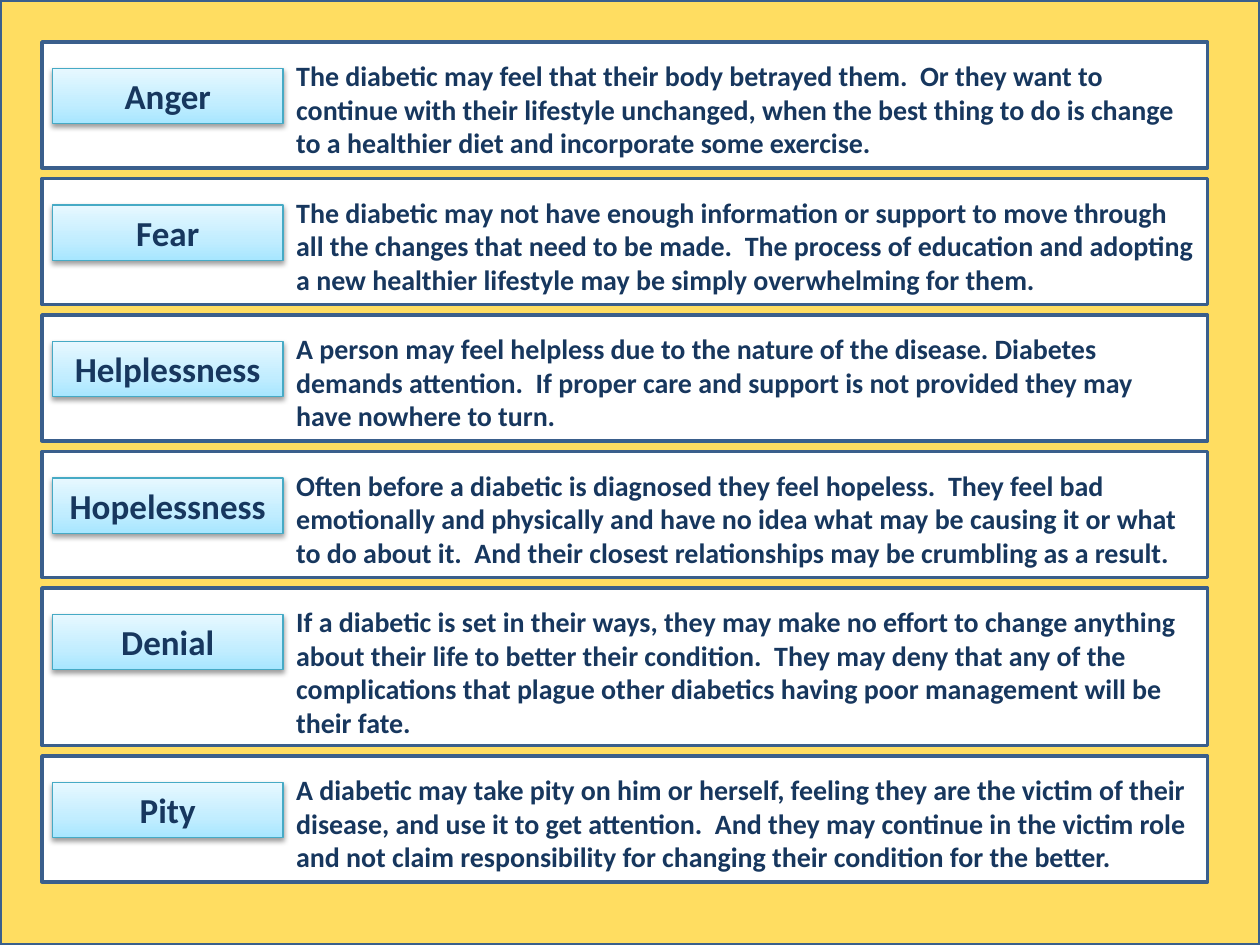
from lxml.etree import SubElement
from pptx import Presentation
from pptx.dml.color import RGBColor
from pptx.enum.shapes import MSO_SHAPE as Shape
from pptx.enum.text import MSO_ANCHOR as Anchor, PP_ALIGN as Align
from pptx.oxml import parse_xml
from pptx.oxml.ns import nsdecls, qn
from pptx.util import Inches, Pt

COLORS = {
    "background": "FFDD61",
    "panel": "FFFFFF",
    "border": "3A5F8C",
    "label_border": "46AAC5",
    "text": "17375E",
    "shadow": "000000",
}
LABEL_STOPS = [(0, "A7E6FF"), (35, "C1EDFF"), (100, "E7F8FF")]
WIDTH, HEIGHT = 10, 7.5
LEFT, TOP, PANEL_WIDTH, GAP = WIDTH / 30, HEIGHT / 22.5, 9.25, 1 / 12
FEELINGS = [
    ("Anger", 1, "The diabetic may feel that their body betrayed them.  Or they want to continue with their lifestyle unchanged, when the best thing to do is change to a healthier diet and incorporate some exercise."),
    ("Fear", 1, "The diabetic may not have enough information or support to move through all the changes that need to be made.  The process of education and adopting a new healthier lifestyle may be simply overwhelming for them."),
    ("Helplessness", 1, "A person may feel helpless due to the nature of the disease. Diabetes demands attention.  If proper care and support is not provided they may have nowhere to turn."),
    ("Hopelessness", 1, "Often before a diabetic is diagnosed they feel hopeless.  They feel bad emotionally and physically and have no idea what may be causing it or what to do about it.  And their closest relationships may be crumbling as a result."),
    ("Denial", 1.25, "If a diabetic is set in their ways, they may make no effort to change anything about their life to better their condition.  They may deny that any of the complications that plague other diabetics having poor management will be their fate."),
    ("Pity", 1, "A diabetic may take pity on him or herself, feeling they are the victim of their disease, and use it to get attention.  And they may continue in the victim role and not claim responsibility for changing their condition for the better."),
]


def color(name):
    return RGBColor.from_string(COLORS[name])


def add_rectangle(page, box, fill, border, weight):
    rectangle = page.shapes.add_shape(Shape.RECTANGLE, *map(Inches, box))
    rectangle.shadow.inherit = False
    rectangle.fill.solid()
    rectangle.fill.fore_color.rgb = color(fill)
    rectangle.line.color.rgb = color(border)
    rectangle.line.width = Pt(weight)
    return rectangle


def write(shape, text, size, align):
    frame = shape.text_frame
    frame.word_wrap = True
    frame.vertical_anchor = Anchor.TOP
    para = frame.paragraphs[0]
    para.text = text
    para.alignment = align
    para.font.name = "Calibri"
    para.font.size = Pt(size)
    para.font.bold = True
    para.font.color.rgb = color("text")


def add_gradient(shape):
    stops = "".join(
        f'<a:gs pos="{share * 1000}"><a:srgbClr val="{shade}"/></a:gs>'
        for share, shade in LABEL_STOPS
    )
    gradient = parse_xml(
        f'<a:gradFill {nsdecls("a")} rotWithShape="1"><a:gsLst>{stops}</a:gsLst>'
        '<a:lin ang="16200000" scaled="1"/></a:gradFill>'
    )
    properties = shape.fill._xPr
    properties.replace(properties.find(qn("a:solidFill")), gradient)


def add_shadow(shape):
    effects = shape._element.spPr.find(qn("a:effectLst"))
    shadow = SubElement(
        effects, qn("a:outerShdw"), blurRad=str(Pt(3.1)), dist=str(Pt(1.6)),
        dir="5400000", rotWithShape="0",
    )
    shade = SubElement(shadow, qn("a:srgbClr"), val=COLORS["shadow"])
    SubElement(shade, qn("a:alpha"), val="38000")


def add_feeling(page, box, name, description):
    left, top, width, height = box
    add_rectangle(page, box, "panel", "border", 2)
    label_box = (left + GAP, top + 0.21, 1.83, 0.44)
    label = add_rectangle(page, label_box, "panel", "label_border", 0.75)
    add_gradient(label)
    add_shadow(label)
    write(label, name, 20, Align.CENTER)
    indent = 1.92
    text_box = (left + indent, top + GAP, width - indent, height - GAP)
    body = page.shapes.add_textbox(*map(Inches, text_box))
    write(body, description, 16, Align.LEFT)


def add_feelings(page, left, top, width):
    for name, height, description in FEELINGS:
        add_feeling(page, (left, top, width, height), name, description)
        top += height + GAP


def main():
    deck = Presentation()
    deck.slide_width, deck.slide_height = Inches(WIDTH), Inches(HEIGHT)
    page = deck.slides.add_slide(deck.slide_layouts[6])
    add_rectangle(page, (0, 0, WIDTH, HEIGHT), "background", "border", 2)
    add_feelings(page, LEFT, TOP, PANEL_WIDTH)
    deck.save("out.pptx")


if __name__ == "__main__":
    main()
